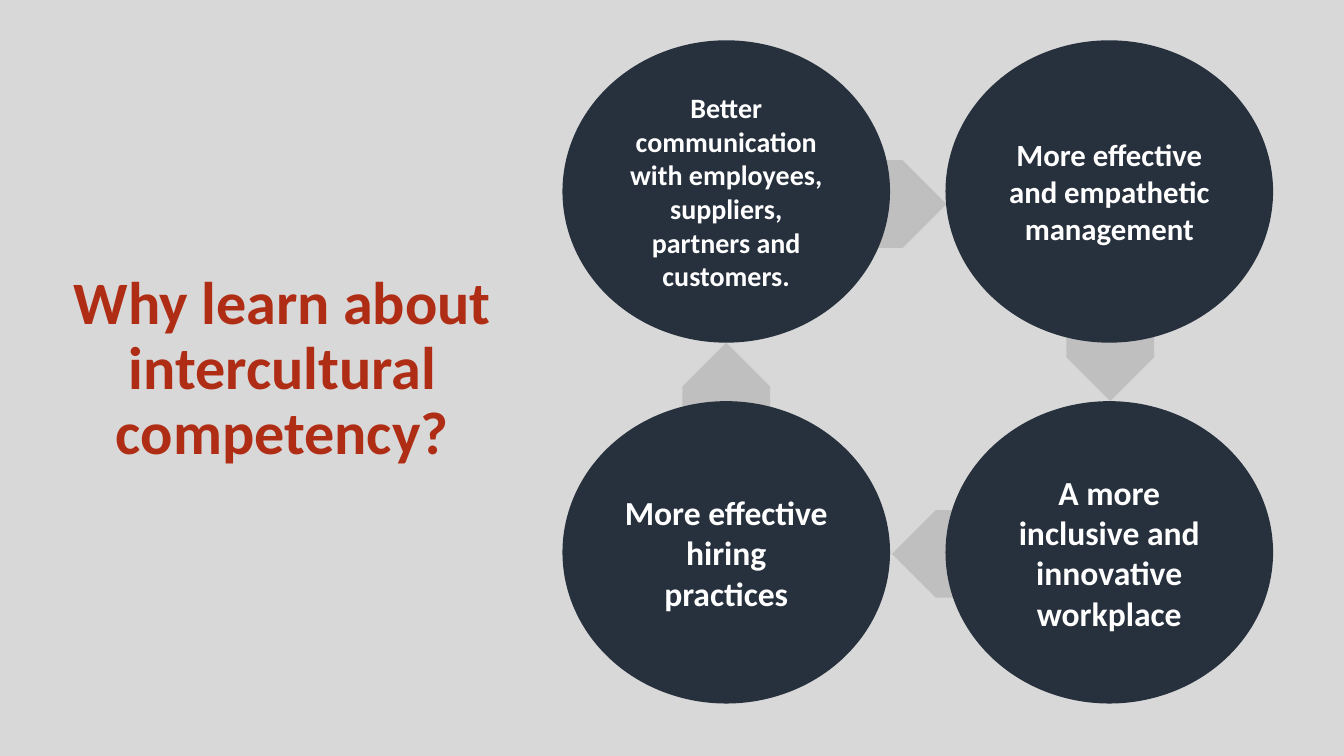
from dataclasses import dataclass

from pptx import Presentation
from pptx import util as u
from pptx.dml import color
from pptx.enum import shapes, text

HUES = {"back": "D8D8D8", "arrow": "BFBFBF", "disc": "27303D",
        "title": "B02D15", "white": "FFFFFF"}
LEFTS, TOPS = (401.76, 675.36), (28.8, 286.56)
DISC = (234, 216)
ARROW = (88.56, 62.64)


@dataclass
class Arrow:
    left: float
    top: float
    turn: int


@dataclass
class Disc:
    col: int
    row: int
    words: str
    size: int


ARROWS = [
    Arrow(587.5, 114.5, 0),
    Arrow(748.8, 210.96, 90),
    Arrow(474.48, 257.76, 270),
    Arrow(637.2, 364.32, 180),
]
DISCS = [
    Disc(0, 0, "Better communication with employees, suppliers, "
               "partners and customers.", 20),
    Disc(1, 0, "More effective and empathetic management", 22),
    Disc(1, 1, "A more inclusive and innovative workplace", 24),
    Disc(0, 1, "More effective hiring practices", 24),
]


def rgb(name: str) -> color.RGBColor:
    return color.RGBColor.from_string(HUES[name])


def write(shape, words: str, *, size: float, hue: str, space: float = 1) -> None:
    frame = shape.text_frame
    frame.text = words
    frame.word_wrap = True
    frame.auto_size = text.MSO_AUTO_SIZE.NONE
    frame.vertical_anchor = text.MSO_ANCHOR.MIDDLE
    para = frame.paragraphs[0]
    para.alignment = text.PP_ALIGN.CENTER
    para.line_spacing = space
    font = para.runs[0].font
    font.name, font.size, font.bold = "Calibri", u.Pt(size), True
    font.color.rgb = rgb(hue)


def place(shape, left: float, top: float, wide: float, high: float) -> None:
    shape.left, shape.top = u.Pt(left), u.Pt(top)
    shape.width, shape.height = u.Pt(wide), u.Pt(high)


def draw(slide, kind, left: float, top: float, dims: tuple[float, float], hue: str):
    shape = slide.shapes.add_shape(kind, 0, 0, 0, 0)
    place(shape, left, top, *dims)
    shape.shadow.inherit = False
    shape.fill.solid()
    shape.fill.fore_color.rgb = rgb(hue)
    shape.line.fill.background()
    return shape


def main() -> None:
    deck = Presentation()
    deck.slide_width, deck.slide_height = u.Pt(960), u.Pt(540)
    slide = deck.slides.add_slide(deck.slide_layouts[5])
    slide.background.fill.solid()
    slide.background.fill.fore_color.rgb = rgb("back")

    # Title
    title = slide.shapes.title
    place(title, 0, 131.04, 403.2, 266.4)
    write(title, "Why learn about intercultural competency?",
          size=43, hue="title", space=0.9)

    # Arrows behind the discs
    for item in ARROWS:
        arrow = draw(slide, shapes.MSO_SHAPE.PENTAGON, item.left, item.top,
                     ARROW, "arrow")
        arrow.rotation = item.turn

    # Cycle of reasons
    for item in DISCS:
        disc = draw(slide, shapes.MSO_SHAPE.OVAL, LEFTS[item.col],
                    TOPS[item.row], DISC, "disc")
        write(disc, item.words, size=item.size, hue="white")

    deck.save("out.pptx")


if __name__ == "__main__":
    main()
